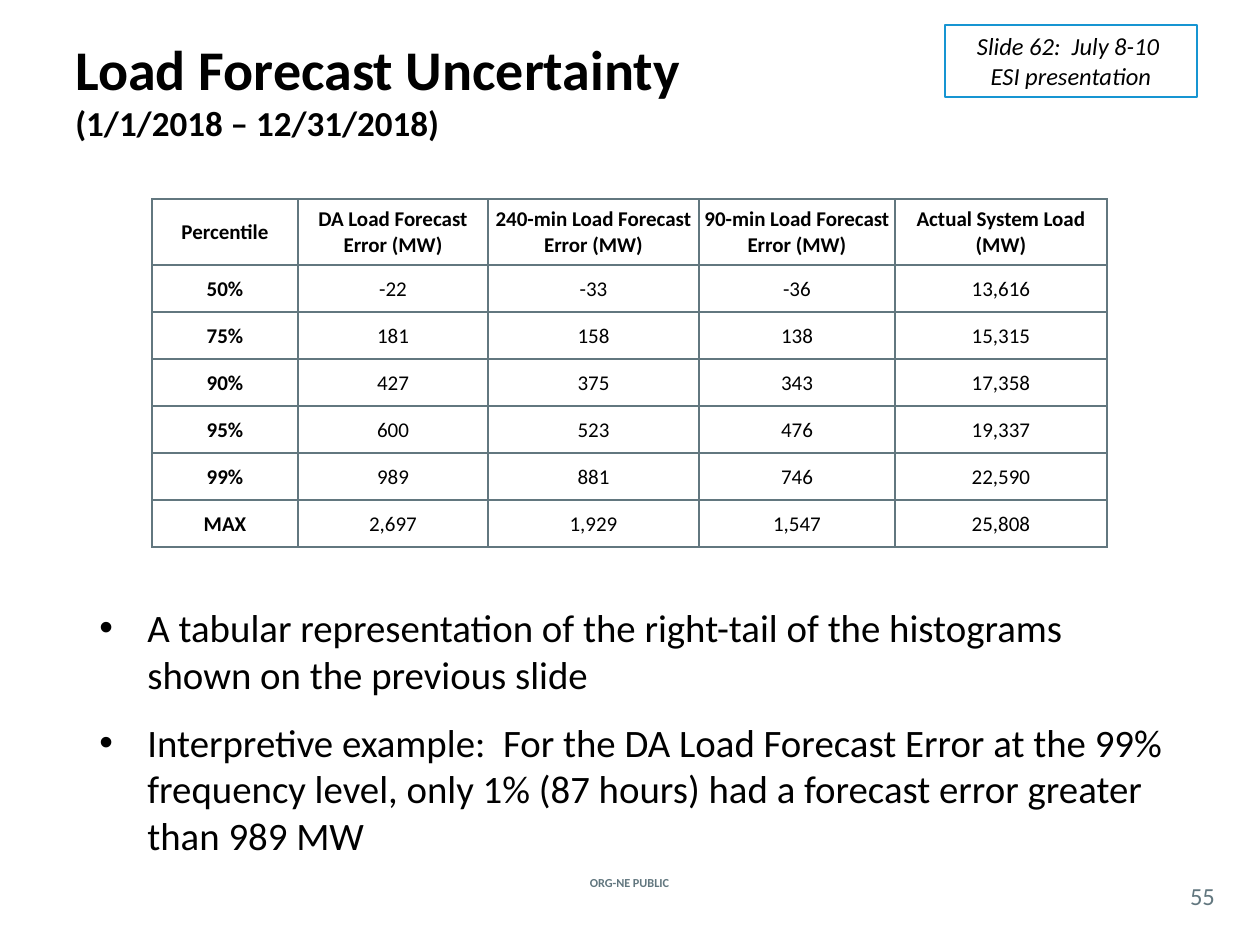
from lxml import etree
from pptx import Presentation
from pptx.dml.color import RGBColor
from pptx.enum.shapes import MSO_SHAPE
from pptx.enum.text import MSO_ANCHOR, PP_ALIGN
from pptx.oxml.ns import qn
from pptx.util import Emu, Pt

RECTANGLE = MSO_SHAPE.RECTANGLE
MIDDLE, TOP = MSO_ANCHOR.MIDDLE, MSO_ANCHOR.TOP
LEFT, CENTER = PP_ALIGN.LEFT, PP_ALIGN.CENTER

FONT = "Calibri"
BLACK, SLATE, BLUE = "000000", "62777F", "1795D2"

COLUMN_WIDTHS = [146, 190, 211, 196, 212]
HEADER_HEIGHT, ROW_HEIGHT = 66, 47
FORECAST_ERRORS = [
    ["Percentile", "DA Load Forecast Error (MW)", "240-min Load Forecast Error (MW)",
     "90-min Load Forecast Error (MW)", "Actual System Load (MW)"],
    ["50%", "-22", "-33", "-36", "13,616"],
    ["75%", "181", "158", "138", "15,315"],
    ["90%", "427", "375", "343", "17,358"],
    ["95%", "600", "523", "476", "19,337"],
    ["99%", "989", "881", "746", "22,590"],
    ["MAX", "2,697", "1,929", "1,547", "25,808"],
]
TAKEAWAYS = [
    "A tabular representation of the right-tail of the histograms shown on the previous slide",
    "Interpretive example:  For the DA Load Forecast Error at the 99% frequency level, "
    "only 1% (87 hours) had a forecast error greater than 989 MW",
]


def px(length):
    """Turn pixels, at 126 to the inch, into EMU."""
    return Emu(round(length * 914400 / 126))


def rgb(color):
    return RGBColor.from_string(color)


def style_runs(paragraph, size, color=BLACK, bold=False, italic=False, align=LEFT):
    paragraph.alignment = align
    for run in paragraph.runs:
        font = run.font
        font.name, font.size = FONT, Pt(size)
        font.bold, font.italic = bold, italic
        font.color.rgb = rgb(color)


def add_text(slide, left, top, width, height, text, anchor=MIDDLE, **style):
    box = slide.shapes.add_textbox(px(left), px(top), px(width), px(height))
    frame = box.text_frame
    frame.word_wrap = True
    frame.vertical_anchor = anchor
    frame.text = text
    for paragraph in frame.paragraphs:
        style_runs(paragraph, **style)
    return frame


def add_title(slide):
    frame = add_text(slide, 63, 10, 1134, 158,
                     "Load Forecast Uncertainty\v(1/1/2018 – 12/31/2018)", size=32, bold=True)
    frame.paragraphs[0].runs[1].font.size = Pt(20)


def add_page_number(slide):
    frame = add_text(slide, 1176, 877, 53, 37, "55", size=14, color=SLATE, align=CENTER)
    frame.margin_left = frame.margin_right = frame.margin_top = frame.margin_bottom = 0


def add_bullets(slide):
    frame = add_text(slide, 87, 598, 1096, 253, "\n".join(TAKEAWAYS), anchor=TOP, size=22.2)
    for index, paragraph in enumerate(frame.paragraphs):
        properties = paragraph._p.get_or_add_pPr()
        properties.set("marL", str(px(48)))
        properties.set("indent", str(px(-48)))
        etree.SubElement(properties, qn("a:buFont")).set("typeface", "Arial")
        etree.SubElement(properties, qn("a:buChar")).set("char", "•")
        if index:
            paragraph.space_before = Pt(12)


def add_source_note(slide):
    note = slide.shapes.add_shape(RECTANGLE, px(945), px(25), px(252), px(72))
    note.shadow.inherit = False
    note.fill.background()
    note.line.color.rgb = rgb(BLUE)
    note.line.width = Pt(0.75)
    frame = note.text_frame
    frame.word_wrap = True
    frame.vertical_anchor = TOP
    frame.text = "Slide 62:  July 8-10 \vESI presentation"
    style_runs(frame.paragraphs[0], size=14, italic=True, align=CENTER)


def border_cell(cell):
    properties = cell._tc.get_or_add_tcPr()
    for position, side in enumerate(["a:lnL", "a:lnR", "a:lnT", "a:lnB"]):
        line = etree.Element(qn(side), w=str(Pt(1)))
        fill = etree.SubElement(line, qn("a:solidFill"))
        etree.SubElement(fill, qn("a:srgbClr")).set("val", SLATE)
        properties.insert(position, line)


def add_error_table(slide):
    row_heights = [HEADER_HEIGHT] + [ROW_HEIGHT] * (len(FORECAST_ERRORS) - 1)
    table = slide.shapes.add_table(
        len(row_heights), len(COLUMN_WIDTHS), px(152), px(199),
        px(sum(COLUMN_WIDTHS)), px(sum(row_heights))).table
    table.first_row = table.horz_banding = False
    for column, width in zip(table.columns, COLUMN_WIDTHS):
        column.width = px(width)
    for row, height in zip(table.rows, row_heights):
        row.height = px(height)
    for r, values in enumerate(FORECAST_ERRORS):
        for c, value in enumerate(values):
            cell = table.cell(r, c)
            cell.fill.background()
            border_cell(cell)
            cell.vertical_anchor = MIDDLE
            cell.margin_left = cell.margin_right = cell.margin_top = px(1)
            cell.margin_bottom = 0
            cell.text = value
            style_runs(cell.text_frame.paragraphs[0], size=12,
                       bold=r == 0 or c == 0, align=CENTER)


def main():
    presentation = Presentation()
    presentation.slide_width, presentation.slide_height = px(1260), px(945)
    slide = presentation.slides.add_slide(presentation.slide_layouts[6])
    add_text(slide, 537, 866, 185, 34, "ORG-NE PUBLIC",
             size=7, color=SLATE, bold=True, align=CENTER)
    add_page_number(slide)
    add_title(slide)
    add_bullets(slide)
    add_error_table(slide)
    add_source_note(slide)
    presentation.save("out.pptx")


if __name__ == "__main__":
    main()
